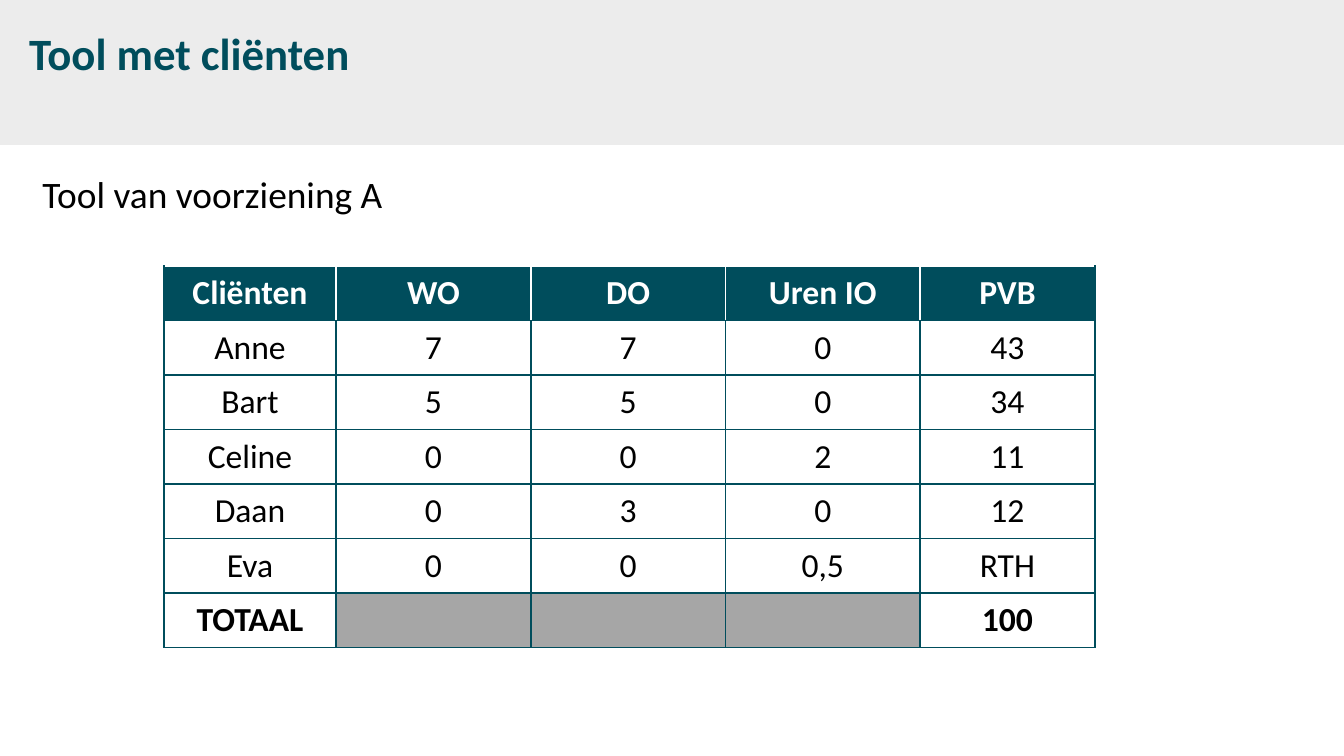
"""Build a slide with a client table for one care provider."""
from dataclasses import dataclass

from lxml import etree
from pptx import Presentation
from pptx.dml.color import RGBColor
from pptx.enum.shapes import MSO_SHAPE
from pptx.enum.text import MSO_ANCHOR, PP_ALIGN
from pptx.oxml.ns import qn
from pptx.util import Cm, Pt

RECTANGLE = MSO_SHAPE.RECTANGLE
TOP = MSO_ANCHOR.TOP
CENTER = PP_ALIGN.CENTER
FONT = "Calibri"
COLORS = {
    "teal": "004D5C",
    "band": "ECECEC",
    "gray": "A6A6A6",
    "white": "FFFFFF",
    "black": "000000",
}
COLUMN_WIDTHS = (3.25, 3.68, 3.68, 3.68, 3.3)
ROW_HEIGHT = 1.03
ROWS = (
    ("Cliënten", "WO", "DO", "Uren IO", "PVB"),
    ("Anne", "7", "7", "0", "43"),
    ("Bart", "5", "5", "0", "34"),
    ("Celine", "0", "0", "2", "11"),
    ("Daan", "0", "3", "0", "12"),
    ("Eva", "0", "0", "0,5", "RTH"),
    ("TOTAAL", "", "", "", "100"),
)


@dataclass
class TextLine:
    text: str
    top: float
    height: float
    indent: float
    size: int
    color: str
    bold: bool


LINES = (
    TextLine("Tool met cliënten", 0.36, 2.0, 0, 24, "teal", True),
    TextLine("Tool van voorziening A", 3.12, 9.42, 0.25, 20, "black", False),
)


def rgb(name: str) -> RGBColor:
    return RGBColor.from_string(COLORS[name])


def style_font(font, size: int, color: str, bold: bool) -> None:
    for key, value in {"name": FONT, "size": Pt(size), "bold": bold}.items():
        setattr(font, key, value)
    font.color.rgb = rgb(color)


def add_band(page) -> None:
    band = page.shapes.add_shape(RECTANGLE, Cm(0), Cm(-0.05), Cm(25.4), Cm(2.79))
    band.shadow.inherit = False
    band.fill.solid()
    band.fill.fore_color.rgb = rgb("band")
    band.line.fill.background()


def add_line(page, line: TextLine) -> None:
    box = page.shapes.add_textbox(Cm(0.3), Cm(line.top), Cm(24.41), Cm(line.height))
    frame = box.text_frame
    for key, value in {
        "word_wrap": True,
        "vertical_anchor": TOP,
        "margin_left": Cm(0.25 + line.indent),
    }.items():
        setattr(frame, key, value)
    para = frame.paragraphs[0]
    span = para.add_run()
    span.text = line.text
    style_font(span.font, line.size, line.color, line.bold)


def add_border(cell, side: str, color: str) -> None:
    properties = cell._tc.get_or_add_tcPr()
    border = etree.SubElement(properties, qn(f"a:ln{side}"), w=str(Pt(1)))
    fill = etree.SubElement(border, qn("a:solidFill"))
    etree.SubElement(fill, qn("a:srgbClr"), val=COLORS[color])


def fill_cell(cell, text: str, row: int, column: int) -> None:
    header = row == 0
    last_column = len(COLUMN_WIDTHS) - 1
    borders = {
        "L": "white" if header and column > 0 else "teal",
        "R": "white" if header and column < last_column else "teal",
        "T": "white" if header else "teal",
        "B": "teal",
    }
    for side, color in borders.items():
        add_border(cell, side, color)
    cell.fill.solid()
    cell.fill.fore_color.rgb = rgb("teal" if header else "white" if text else "gray")
    para = cell.text_frame.paragraphs[0]
    para.alignment = CENTER
    if text:
        span = para.add_run()
        span.text = text
        bold = row in (0, len(ROWS) - 1)
        style_font(span.font, 18, "white" if header else "black", bold)


def add_client_table(page) -> None:
    table = page.shapes.add_table(
        len(ROWS), len(COLUMN_WIDTHS), Cm(3.1), Cm(5.03),
        Cm(sum(COLUMN_WIDTHS)), Cm(ROW_HEIGHT * len(ROWS)),
    ).table
    table.horz_banding = False
    for column, width in zip(table.columns, COLUMN_WIDTHS):
        column.width = Cm(width)
    for row, texts in enumerate(ROWS):
        table.rows[row].height = Cm(ROW_HEIGHT)
        for column, text in enumerate(texts):
            fill_cell(table.cell(row, column), text, row, column)


def main() -> None:
    deck = Presentation()
    deck.slide_width, deck.slide_height = Cm(25.4), Cm(14.29)
    page = deck.slides.add_slide(deck.slide_layouts[6])
    add_band(page)
    for line in LINES:
        add_line(page, line)
    add_client_table(page)
    deck.save("out.pptx")


if __name__ == "__main__":
    main()
